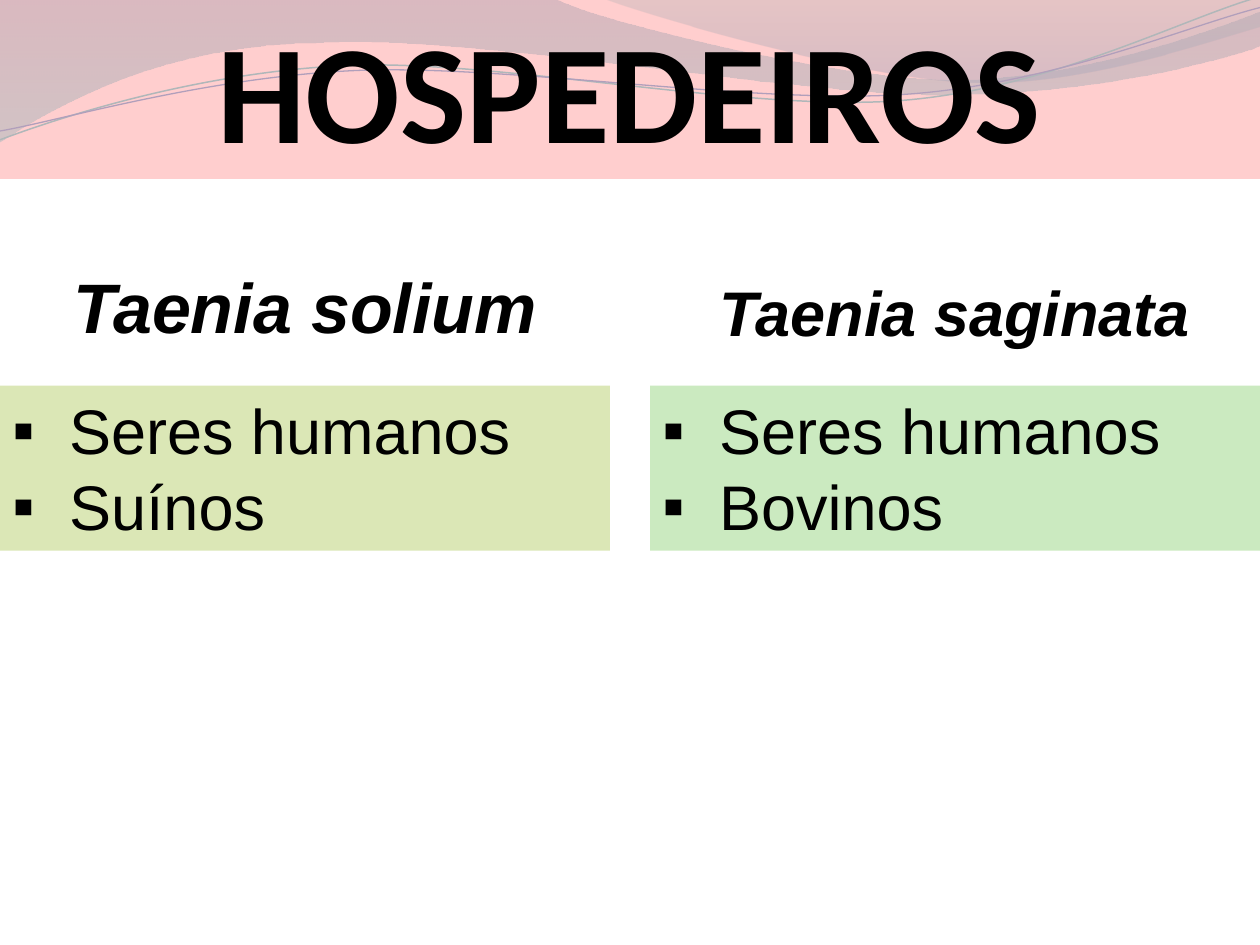
from lxml import etree
from pptx import Presentation
from pptx.dml.color import RGBColor
from pptx.enum.shapes import MSO_SHAPE
from pptx.enum.text import MSO_ANCHOR, PP_ALIGN
from pptx.oxml import parse_xml
from pptx.oxml.ns import qn
from pptx.util import Inches, Pt

RECT = MSO_SHAPE.RECTANGLE
MIDDLE, TOP = MSO_ANCHOR.MIDDLE, MSO_ANCHOR.TOP
CENTER, LEFT = PP_ALIGN.CENTER, PP_ALIGN.LEFT
A_NS = "http://schemas.openxmlformats.org/drawingml/2006/main"


def rgb(value):
    return RGBColor.from_string(value)


def write(s, lines, anchor, align, **font):
    """Fill a shape with one paragraph per line and return the paragraphs."""
    tf = s.text_frame
    tf.word_wrap = True
    tf.vertical_anchor = anchor
    for i, line in enumerate(lines):
        p = tf.paragraphs[0] if i == 0 else tf.add_paragraph()
        p.alignment = align
        r = p.add_run()
        r.text = line
        r.font.color.rgb = rgb("000000")
        for name, value in font.items():
            setattr(r.font, name, value)
    return tf.paragraphs


prs = Presentation()
prs.slide_width, prs.slide_height = Inches(10), Inches(7.5)
slide = prs.slides.add_slide(prs.slide_layouts[6])

# Waves: one point is a straight segment, three points are a Bezier curve.
# Gradient stops are position, colour and opacity, in percent.
waves = [
    {"start": (0, -0.01),
     "path": [[(4.4, -0.01)],
              [(4.76, 0.17), (6.64, 0.63), (7.58, 0.63)],
              [(8.53, 0.63), (9.58, 0.26), (10, 0.09)],
              [(10.01, 0.36)],
              [(9.83, 0.44), (8.7, 0.76), (7.46, 0.75)],
              [(6.22, 0.75), (3.82, 0.28), (2.57, 0.34)],
              [(1.29, 0.35), (0.46, 0.83), (-0.01, 1.13)]],
     "stops": [(0, "0074A1", 45), (100, "00C6CF", 55)]},
    {"start": (4.79, -0.01),
     "path": [[(5.09, 0.11), (6.82, 0.62), (7.69, 0.65)],
              [(8.56, 0.69), (9.61, 0.32), (10, 0.21)],
              [(10, 0)]],
     "stops": [(0, "00A1A9", 30), (80, "008BBF", 45)]},
    {"start": (0, 1.11),
     "path": [[(0.48, 0.93), (1.58, 0.57), (2.77, 0.52)],
              [(3.95, 0.47), (5.93, 0.89), (7.13, 0.8)],
              [(8.33, 0.71), (9.38, 0.15), (9.98, -0.02)]],
     "line": ("0AB8BF", 0.85)},
    {"start": (0, 1.04),
     "path": [[(0.47, 0.96), (1.64, 0.61), (2.83, 0.56)],
              [(4.03, 0.51), (5.97, 0.83), (7.17, 0.75)],
              [(8.36, 0.67), (9.41, 0.21), (10, 0.06)]],
     "line": ("0F6FC6", 0.75)},
]
for wave in waves:
    x, y = wave["start"]
    builder = slide.shapes.build_freeform(Inches(x), Inches(y))
    points = [(Inches(x), Inches(y)) for segment in wave["path"] for x, y in segment]
    builder.add_line_segments(points, close="stops" in wave)
    s = builder.convert_to_shape()
    s.shadow.inherit = False
    s.fill.background()

    # Join each group of three line points into one curve
    vertices = iter(s.element.spPr.findall(".//" + qn("a:lnTo")))
    for segment in wave["path"]:
        first, *rest = [next(vertices) for _ in segment]
        if rest:
            curve = etree.Element(qn("a:cubicBezTo"))
            first.addprevious(curve)
            for vertex in (first, *rest):
                curve.append(vertex[0])
                vertex.getparent().remove(vertex)

    if "line" in wave:
        color, width = wave["line"]
        s.line.color.rgb = rgb(color)
        s.line.width = Pt(width)
    else:
        s.line.fill.background()
        stops = "".join(
            f'<a:gs pos="{pos * 1000}"><a:srgbClr val="{color}">'
            f'<a:alpha val="{alpha * 1000}"/></a:srgbClr></a:gs>'
            for pos, color, alpha in wave["stops"])
        gradient = parse_xml(
            f'<a:gradFill xmlns:a="{A_NS}" rotWithShape="1"><a:gsLst>{stops}</a:gsLst>'
            '<a:lin ang="5400000" scaled="0"/></a:gradFill>')
        no_fill = s.element.spPr.find(qn("a:noFill"))
        s.element.spPr.replace(no_fill, gradient)

# Title band
band = slide.shapes.add_shape(RECT, 0, Inches(-0.03), Inches(10), Inches(1.45))
band.shadow.inherit = False
band.fill.solid()
band.fill.fore_color.rgb = rgb("FFB7B7")
band.line.fill.background()
band_color = band.element.spPr.find(".//" + qn("a:srgbClr"))
etree.SubElement(band_color, qn("a:alpha"), val="68000")
write(band, ["HOSPEDEIROS"], MIDDLE, CENTER, name="Calibri", size=Pt(80), bold=True)

# One column per species: heading and list of hosts
WIDTH = 4.84
columns = [
    (0, "Taenia solium", 2.04, 0.77, 40, "DBE7B6", ["Seres humanos", "Suínos"]),
    (10 - WIDTH, "Taenia saginata", 2.12, 0.71, 36, "CBEAC0", ["Seres humanos", "Bovinos"]),
]
for left, species, top, height, size, color, hosts in columns:
    heading = slide.shapes.add_textbox(Inches(left), Inches(top), Inches(WIDTH), Inches(height))
    write(heading, [species], TOP, CENTER, name="Arial", size=Pt(size), bold=True, italic=True)

    box = slide.shapes.add_shape(RECT, Inches(left), Inches(3.06), Inches(WIDTH), Inches(1.31))
    box.shadow.inherit = False
    box.fill.solid()
    box.fill.fore_color.rgb = rgb(color)
    box.line.fill.background()
    for p in write(box, hosts, TOP, LEFT, name="Arial", size=Pt(36)):
        pPr = p._p.get_or_add_pPr()
        pPr.set("marL", str(Inches(0.45)))
        pPr.set("indent", str(Inches(-0.45)))
        etree.SubElement(pPr, qn("a:buFont"), typeface="Arial")
        etree.SubElement(pPr, qn("a:buChar"), char="▪")

prs.save("out.pptx")
